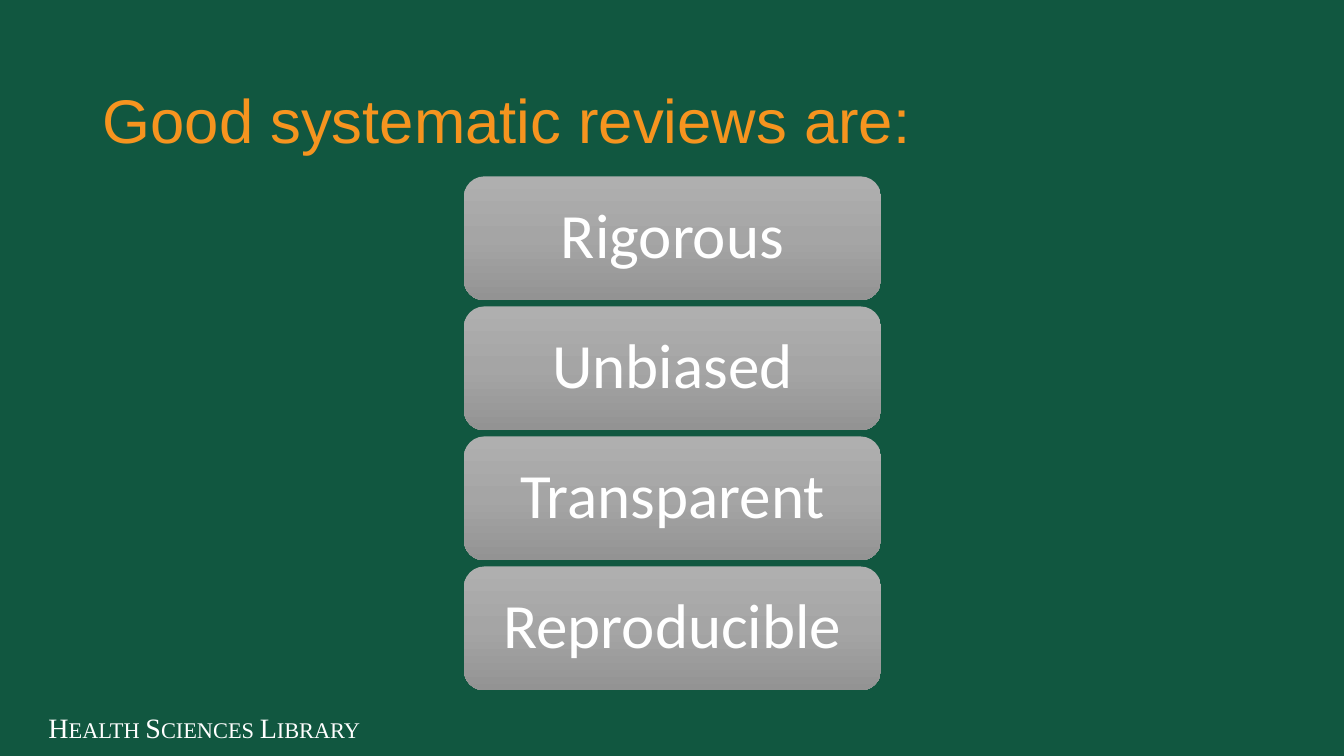
from copy import deepcopy

from pptx import Presentation
from pptx.dml.color import RGBColor
from pptx.enum.shapes import MSO_SHAPE
from pptx.enum.text import MSO_ANCHOR, PP_ALIGN
from pptx.oxml.ns import qn
from pptx.util import Inches, Pt

ROUNDED = MSO_SHAPE.ROUNDED_RECTANGLE
MIDDLE = MSO_ANCHOR.MIDDLE
TOP = MSO_ANCHOR.TOP
LEFT = PP_ALIGN.LEFT
CENTER = PP_ALIGN.CENTER
RIGHT = PP_ALIGN.RIGHT

GREEN = "115740"
ORANGE = "F6941F"
WHITE = "FFFFFF"
GRAY_STOPS = ((0, "AFAFAF"), (0.5, "A5A5A5"), (1, "939393"))

QUALITIES = ("Rigorous", "Unbiased", "Transparent", "Reproducible")
CARD_TOP = 1.75
CARD_STEP = 1.29


def color(value):
    return RGBColor.from_string(value)


def write(box, text, font, size, shade, align, anchor, spacing=1.0):
    frame = box.text_frame
    frame.word_wrap = True
    frame.vertical_anchor = anchor
    para = frame.paragraphs[0]
    para.text = text
    para.alignment = align
    para.line_spacing = spacing
    para.font.name = font
    para.font.size = Pt(size)
    para.font.color.rgb = color(shade)
    return para


def add_text(page, place, *style):
    box = page.shapes.add_textbox(*map(Inches, place))
    return write(box, *style)


def fill_gradient(shape, stops):
    shape.fill.gradient()
    shape.fill.gradient_angle = 270
    stop_list = shape._element.spPr.find(".//" + qn("a:gsLst"))
    stop_list.append(deepcopy(stop_list[0]))
    for stop, (position, shade) in zip(shape.fill.gradient_stops, stops):
        stop.position = position
        stop.color.rgb = color(shade)


def add_card(page, top, text):
    card = page.shapes.add_shape(
        ROUNDED, Inches(4.6), Inches(top), Inches(4.14), Inches(1.23))
    card.shadow.inherit = False
    card.line.fill.background()
    fill_gradient(card, GRAY_STOPS)
    frame = card.text_frame
    frame.margin_left = frame.margin_right = Inches(0.19)
    frame.margin_top = frame.margin_bottom = Inches(0.09)
    write(card, text, "Calibri", 45, WHITE, CENTER, MIDDLE, 0.9)


def main():
    deck = Presentation()
    deck.slide_width = Inches(13.33)
    deck.slide_height = Inches(7.5)
    page = deck.slides.add_slide(deck.slide_layouts[6])
    page.background.fill.solid()
    page.background.fill.fore_color.rgb = color(GREEN)

    library = add_text(page, (0.18, 7, 3.49, 0.44), "Health Sciences Library",
                       "Times New Roman", 20, WHITE, RIGHT, TOP)
    library._p.pPr.find(qn("a:defRPr")).set("cap", "small")
    add_text(page, (0.92, 0.5, 11.5, 1.45), "Good systematic reviews are:",
             "Arial", 44, ORANGE, LEFT, MIDDLE, 0.9)
    for index, quality in enumerate(QUALITIES):
        add_card(page, CARD_TOP + index * CARD_STEP, quality)

    deck.save("out.pptx")


if __name__ == "__main__":
    main()
